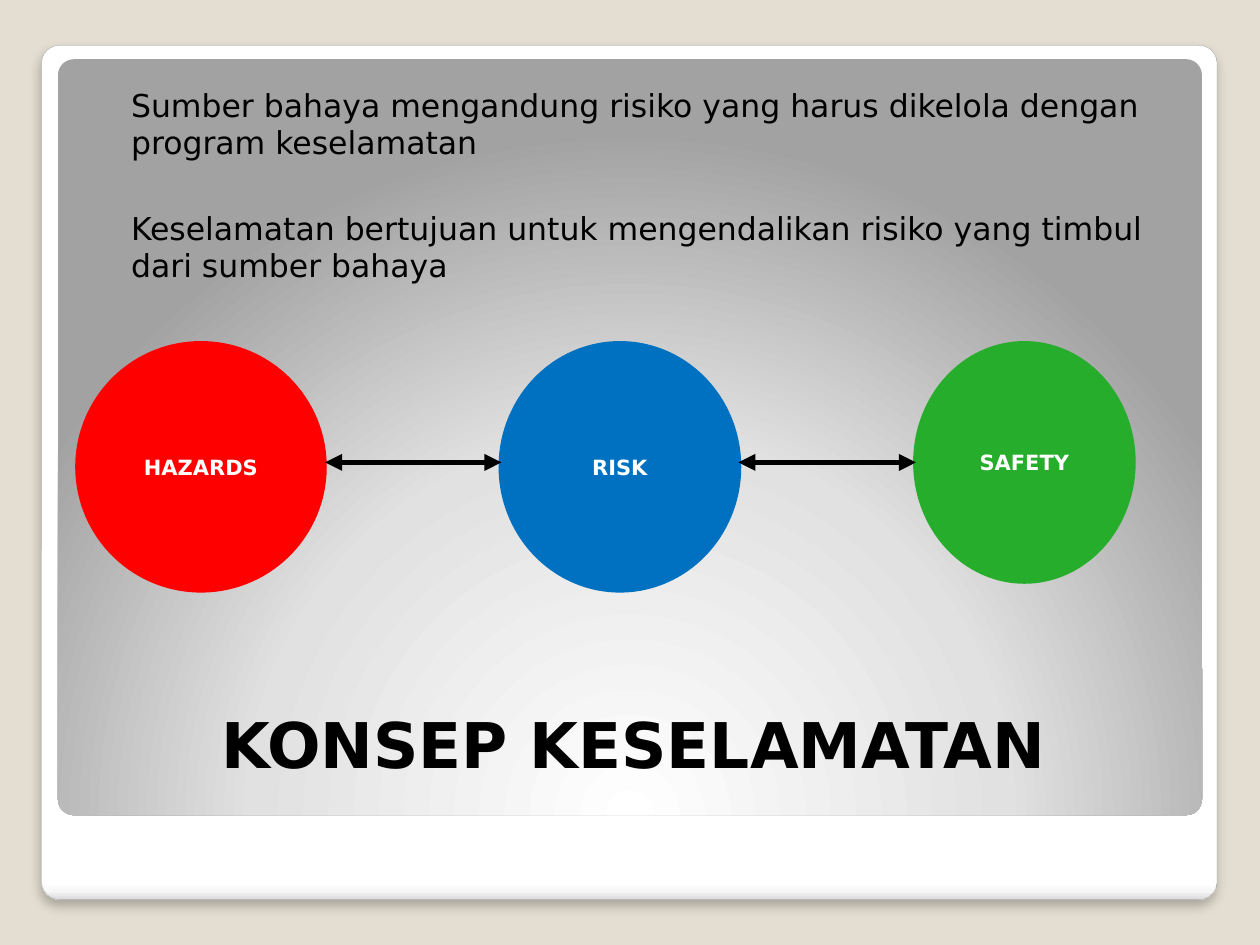
"""Build the safety concept slide: hazards, risk and safety."""
from lxml import etree
from pptx import Presentation
from pptx.dml.color import RGBColor
from pptx.enum.shapes import MSO_CONNECTOR, MSO_SHAPE
from pptx.enum.text import MSO_ANCHOR, PP_ALIGN
from pptx.oxml import parse_xml
from pptx.oxml.ns import nsdecls, qn
from pptx.util import Inches, Pt

FONT = "DejaVu Sans"
BEIGE = RGBColor(0xE3, 0xDE, 0xD1)
GRAY = RGBColor(0xA4, 0xA4, 0xA4)
BLACK = RGBColor(0, 0, 0)
WHITE = RGBColor(0xFF, 0xFF, 0xFF)
RED = RGBColor(0xFF, 0, 0)
BLUE = RGBColor(0, 0x70, 0xC0)
GREEN = RGBColor(0x25, 0xAD, 0x2B)


def add_panel(left, top, width, height, stops, direction):
    panel = slide.shapes.add_shape(
        MSO_SHAPE.ROUNDED_RECTANGLE, Inches(left), Inches(top), Inches(width), Inches(height)
    )
    panel.adjustments[0] = 0.021
    panel.shadow.inherit = False
    stop_list = "".join(
        f'<a:gs pos="{position * 1000}"><a:srgbClr val="{color}"/></a:gs>' for position, color in stops
    )
    gradient = f'<a:gradFill {nsdecls("a")} rotWithShape="1"><a:gsLst>{stop_list}</a:gsLst>{direction}</a:gradFill>'
    panel.element.spPr.find(qn("a:prstGeom")).addnext(parse_xml(gradient))
    return panel


def style_paragraph(paragraph, text, size, color, bold=False, alignment=PP_ALIGN.LEFT):
    paragraph.text = text
    paragraph.alignment = alignment
    paragraph.font.name = FONT
    paragraph.font.size = Pt(size)
    paragraph.font.bold = bold
    paragraph.font.color.rgb = color


presentation = Presentation()
presentation.slide_width = Inches(10)
presentation.slide_height = Inches(7.5)
slide = presentation.slides.add_slide(presentation.slide_layouts[6])
slide.background.fill.solid()
slide.background.fill.fore_color.rgb = BEIGE

frame = add_panel(
    0.33, 0.36, 9.33, 6.78,
    [(0, "FFFFFF"), (98, "FFFFFF"), (99, "F7F7F7"), (100, "DADADA")],
    '<a:lin ang="5400000" scaled="0"/>',
)
frame.line.color.rgb = GRAY
frame.line.width = Pt(0.16)
frame.element.spPr.find(qn("a:effectLst")).append(parse_xml(
    f'<a:outerShdw {nsdecls("a")} blurRad="{Pt(6)}" dist="{Pt(4)}" dir="5400000" rotWithShape="0">'
    '<a:srgbClr val="000000"><a:alpha val="25000"/></a:srgbClr></a:outerShdw>'
))

backdrop = add_panel(
    0.46, 0.47, 9.08, 6,
    [(0, "FFFFFF"), (55, "E1E1E1"), (100, "A2A2A2")],
    '<a:path path="circle"><a:fillToRect l="50000" t="175000" r="50000" b="-75000"/></a:path>',
)
backdrop.line.fill.background()

title = slide.shapes.add_textbox(Inches(0.55), Inches(5.45), Inches(8.95), Inches(0.8))
title.text_frame.word_wrap = True
title.text_frame.vertical_anchor = MSO_ANCHOR.BOTTOM
style_paragraph(title.text_frame.paragraphs[0], "KONSEP KESELAMATAN", 36, BLACK, True, PP_ALIGN.CENTER)

body = slide.shapes.add_textbox(Inches(0.55), Inches(0.58), Inches(8.95), Inches(4.58))
body_frame = body.text_frame
body_frame.word_wrap = True
body_frame.margin_left = Inches(0.49)
body_frame.margin_top = Inches(0.1)
statements = [
    ("Sumber bahaya mengandung risiko yang harus dikelola dengan program keselamatan", 2.5),
    ("Keselamatan bertujuan untuk mengendalikan risiko yang timbul dari sumber bahaya", 27),
]
body_frame.add_paragraph()
for paragraph, (statement, space_before) in zip(body_frame.paragraphs, statements):
    style_paragraph(paragraph, statement, 18, BLACK)
    paragraph.space_before = Pt(space_before)

circles = [
    ("HAZARDS", RED, 0.62, 1.95, 1.95),
    ("RISK", BLUE, 3.98, 1.88, 1.95),
    ("SAFETY", GREEN, 7.27, 1.72, 1.88),
]
for label, color, left, width, height in circles:
    circle = slide.shapes.add_shape(
        MSO_SHAPE.OVAL, Inches(left), Inches(2.73), Inches(width), Inches(height)
    )
    circle.shadow.inherit = False
    circle.fill.solid()
    circle.fill.fore_color.rgb = color
    circle.line.color.rgb = color
    circle.line.width = Pt(3.35)
    circle.text_frame.vertical_anchor = MSO_ANCHOR.MIDDLE
    style_paragraph(circle.text_frame.paragraphs[0], label, 12, WHITE, True, PP_ALIGN.CENTER)

for start, end in [(2.58, 3.98), (5.86, 7.27)]:
    arrow = slide.shapes.add_connector(
        MSO_CONNECTOR.STRAIGHT, Inches(start), Inches(3.67), Inches(end), Inches(3.67)
    )
    arrow.line.color.rgb = BLACK
    arrow.line.width = Pt(3.25)
    for tag in ("a:headEnd", "a:tailEnd"):
        etree.SubElement(arrow.line._get_or_add_ln(), qn(tag), type="triangle")
    etree.SubElement(arrow.element.spPr, qn("a:effectLst"))

presentation.save("out.pptx")
